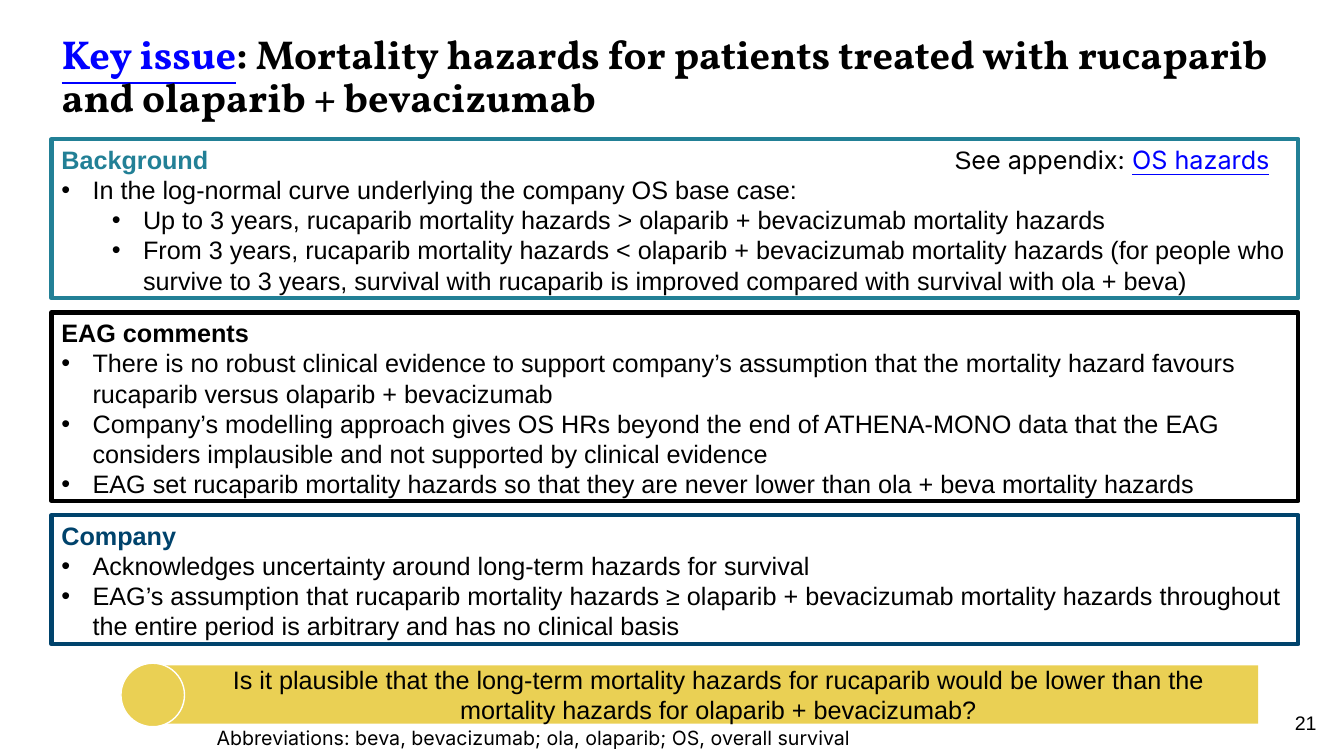
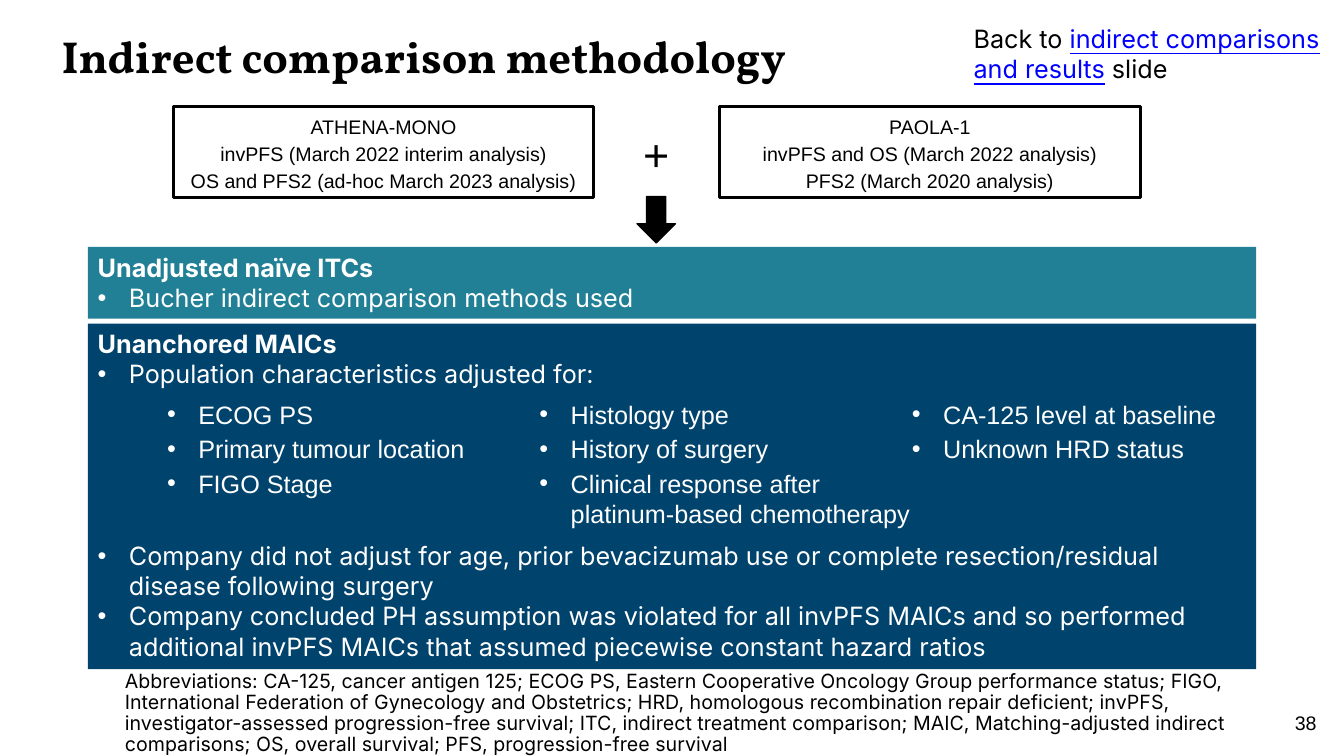
from lxml import etree
from pptx import Presentation
from pptx import util as u
from pptx.dml.color import RGBColor
from pptx.enum import shapes, text
from pptx.oxml.ns import qn

# Shared look
TEAL = RGBColor(0x22, 0x80, 0x96)
NAVY = RGBColor(0x00, 0x43, 0x6C)
YELLOW = RGBColor(0xEA, 0xD0, 0x54)
BLACK = RGBColor(0, 0, 0)
WHITE = RGBColor(0xFF, 0xFF, 0xFF)
LINK_BLUE = RGBColor(0, 0, 0xFF)
BODY_FONT, NOTE_FONT, TITLE_FONT = "Arial", "Inter", "Vollkorn"
LINK = {"color": LINK_BLUE, "underline": True}
CENTER, RIGHT = text.PP_ALIGN.CENTER, text.PP_ALIGN.RIGHT
RECTANGLE = shapes.MSO_SHAPE.RECTANGLE

# The grid: 100 columns by 100 rows over the slide
SLIDE_WIDTH, SLIDE_HEIGHT = u.Inches(13.33), u.Inches(7.5)
BULLET_INDENT = u.Inches(0.31)
LEVEL_STEP = u.Inches(0.5)


def place(left, top, width, height):
    """Turn grid columns and rows into slide lengths."""
    return (int(SLIDE_WIDTH * left / 100), int(SLIDE_HEIGHT * top / 100),
            int(SLIDE_WIDTH * width / 100), int(SLIDE_HEIGHT * height / 100))


def add_bullet(paragraph, level):
    paragraph.level = level
    properties = paragraph._p.get_or_add_pPr()
    properties.set("marL", str(BULLET_INDENT + level * LEVEL_STEP))
    properties.set("indent", str(-BULLET_INDENT))
    etree.SubElement(properties, qn("a:buFont")).set("typeface", "Arial")
    etree.SubElement(properties, qn("a:buChar")).set("char", "•")


def add_text(shape, content, size=18, font=BODY_FONT, color=BLACK, bold=False,
             underline=False, align=text.PP_ALIGN.LEFT, spacing=None,
             before=None, bullet=None):
    """Append one paragraph; content is a string or (string, format) runs."""
    frame = shape.text_frame
    paragraph = frame.paragraphs[0]
    if paragraph.runs:
        paragraph = frame.add_paragraph()
    if bullet is not None:
        add_bullet(paragraph, bullet)
    paragraph.alignment = align
    if spacing:
        paragraph.line_spacing = spacing
    if before:
        paragraph.space_before = u.Pt(before)
    base = {"size": size, "font": font, "color": color, "bold": bold,
            "underline": underline}
    runs = [(content, {})] if isinstance(content, str) else content
    for words, changes in runs:
        look = {**base, **changes}
        run = paragraph.add_run()
        run.text = words
        run.font.size = u.Pt(look["size"])
        run.font.name = look["font"]
        run.font.color.rgb = look["color"]
        run.font.bold = look["bold"]
        run.font.underline = look["underline"]


def add_box(slide, area, fill=None, line=None, line_width=1, kind=RECTANGLE):
    shape = slide.shapes.add_shape(kind, *place(*area))
    shape.shadow.inherit = False
    if fill is None:
        shape.fill.background()
    else:
        shape.fill.solid()
        shape.fill.fore_color.rgb = fill
    if line is None:
        shape.line.fill.background()
    else:
        shape.line.color.rgb = line
        shape.line.width = u.Pt(line_width)
    shape.text_frame.word_wrap = True
    shape.text_frame.vertical_anchor = text.MSO_ANCHOR.TOP
    return shape


def add_label(slide, area, content, **look):
    label = slide.shapes.add_textbox(*place(*area))
    label.text_frame.word_wrap = True
    add_text(label, content, **look)
    return label


def add_abbreviations(slide, area, content):
    add_label(slide, area, "Abbreviations: " + content, size=14,
              font=NOTE_FONT, spacing=0.9)


def add_panel(slide, area, heading, bullets, heading_color, **look):
    """A box with a bold heading; bullets are (string, format) pairs."""
    panel = add_box(slide, area, **look)
    add_text(panel, heading, color=heading_color, bold=True)
    for words, changes in bullets:
        add_text(panel, words, **{"bullet": 0, **changes})


def add_band(slide, area, fill, heading, bullets):
    band = add_box(slide, area, fill=fill)
    look = {"font": NOTE_FONT, "color": WHITE}
    add_text(band, heading, bold=True, **look)
    for words, before in bullets:
        add_text(band, words, bullet=0, before=before, **look)


def add_slide(presentation, title, size, number):
    slide = presentation.slides.add_slide(presentation.slide_layouts[5])
    heading = slide.shapes.title
    heading.left, heading.top, heading.width, heading.height = place(
        3.83, 3.87, 92.25, 8.67)
    heading.text_frame.word_wrap = True
    heading.text_frame.auto_size = text.MSO_AUTO_SIZE.NONE
    heading.text_frame.vertical_anchor = text.MSO_ANCHOR.TOP
    add_text(heading, title, size=size, font=TITLE_FONT, bold=True, spacing=0.9)
    add_label(slide, (94.88, 93.33, 3.82, 5.33), str(number), size=14,
              align=RIGHT)
    return slide


def build_hazards(presentation):
    slide = add_slide(presentation, [
        ("Key issue", LINK),
        (": Mortality hazards for patients treated with rucaparib and "
         "olaparib + bevacizumab", {})], 28.8, 21)

    # Stacked outlined panels
    panels = [
        ("Background", TEAL, 21.07, [
            ("In the log-normal curve underlying the company OS base case:", {}),
            ("Up to 3 years, rucaparib mortality hazards > olaparib + "
             "bevacizumab mortality hazards", {"bullet": 1}),
            ("From 3 years, rucaparib mortality hazards < olaparib + "
             "bevacizumab mortality hazards (for people who survive to 3 years, "
             "survival with rucaparib is improved compared with survival with "
             "ola + beva)", {"bullet": 1})]),
        ("EAG comments", BLACK, 24.93, [
            ("There is no robust clinical evidence to support company’s "
             "assumption that the mortality hazard favours rucaparib versus "
             "olaparib + bevacizumab", {}),
            ("Company’s modelling approach gives OS HRs beyond the end of "
             "ATHENA-MONO data that the EAG considers implausible and not "
             "supported by clinical evidence", {}),
            ("EAG set rucaparib mortality hazards so that they are never lower "
             "than ola + beva mortality hazards", {})]),
        ("Company", NAVY, 17.07, [
            ("Acknowledges uncertainty around long-term hazards for survival",
             {}),
            ("EAG’s assumption that rucaparib mortality hazards ≥ olaparib + "
             "bevacizumab mortality hazards throughout the entire period is "
             "arbitrary and has no clinical basis", {})]),
    ]
    first_top, gap = 18.4, 1.87
    top = first_top
    for heading, color, height, bullets in panels:
        add_panel(slide, (3.83, top, 92.78, height), heading, bullets, color,
                  line=color, line_width=3)
        top += height + gap

    # Question for the committee
    question = add_box(slide, (11.93, 88, 81.68, 7.73), fill=YELLOW)
    question.text_frame.margin_left = u.Inches(0.28)
    question.text_frame.vertical_anchor = text.MSO_ANCHOR.MIDDLE
    add_text(question, "Is it plausible that the long-term mortality hazards for "
             "rucaparib would be lower than the mortality hazards for olaparib "
             "+ bevacizumab?", align=CENTER)
    add_box(slide, (9, 87.73, 4.73, 8.4), fill=YELLOW, line=WHITE,
            kind=shapes.MSO_SHAPE.OVAL)

    # Cross-reference and abbreviations
    add_label(slide, (70.28, first_top, 26.33, 5.33), [
        ("S", {"font": BODY_FONT}), ("ee appendix: ", {}),
        ("OS hazards", LINK)], font=NOTE_FONT)
    add_abbreviations(slide, (15.38, 95.73, 74.55, 5.33),
                      "beva, bevacizumab; ola, olaparib; OS, overall survival")


def build_methodology(presentation):
    slide = add_slide(presentation, "Indirect comparison methodology", 32, 38)

    # Trials being compared
    trials = [
        (12.9, ["ATHENA-MONO", "invPFS (March 2022 interim analysis)",
                "OS and PFS2 (ad-hoc March 2023 analysis)"]),
        (53.55, ["PAOLA-1", "invPFS and OS (March 2022 analysis)",
                 "PFS2 (March 2020 analysis)"]),
    ]
    for left, lines in trials:
        trial = add_box(slide, (left, 14.13, 31.28, 12), fill=WHITE, line=BLACK,
                        line_width=2.25)
        for line in lines:
            add_text(trial, line, size=14, align=CENTER, spacing=1.14)
    add_label(slide, (46.88, 15.07, 3.9, 4.67), "+", size=32, align=CENTER,
              spacing=1.14)
    add_box(slide, (47.4, 26, 2.85, 6.13), fill=BLACK, line=BLACK,
            kind=shapes.MSO_SHAPE.DOWN_ARROW)

    # Method bands; the second leaves room for the characteristics
    add_band(slide, (6.53, 32.67, 86.93, 9.47), TEAL, "Unadjusted naïve ITCs",
             [("Bucher indirect comparison methods used", None)])
    add_band(slide, (6.53, 42.8, 86.93, 45.73), NAVY, "Unanchored MAICs", [
        ("Population characteristics adjusted for:", None),
        ("Company did not adjust for age, prior bevacizumab use or complete "
         "resection/residual disease following surgery", 108),
        ("Company concluded PH assumption was violated for all invPFS MAICs and "
         "so performed additional invPFS MAICs that assumed piecewise constant "
         "hazard ratios", None)])

    # Characteristics in three text columns
    first, *others = [
        "ECOG PS", "Primary tumour location", "FIGO Stage", "Histology type",
        "History of surgery",
        "Clinical response after platinum-based chemotherapy",
        "CA-125 level at baseline", "Unknown HRD status"]
    characteristics = add_label(slide, (11.7, 52.13, 84.6, 18.93), first,
                                color=WHITE, bullet=0)
    characteristics.text_frame._txBody.bodyPr.set("numCol", "3")
    for name in others:
        add_text(characteristics, name, color=WHITE, bullet=0, before=3)

    # Abbreviations and way back
    add_abbreviations(
        slide, (8.55, 88.13, 86.93, 5.2),
        "CA-125, cancer antigen 125; ECOG PS, Eastern Cooperative Oncology Group "
        "performance status; FIGO, International Federation of Gynecology and "
        "Obstetrics; HRD, homologous recombination repair deficient; invPFS, "
        "investigator-assessed progression-free survival; ITC, indirect "
        "treatment comparison; MAIC, Matching-adjusted indirect comparisons; "
        "OS, overall survival; PFS, progression-free survival")
    add_label(slide, (71.7, 2.4, 27.83, 9.47), [
        ("Back to ", {}), ("indirect comparisons and results", LINK),
        (" slide", {})], font=NOTE_FONT)


def main():
    presentation = Presentation()
    presentation.slide_width = SLIDE_WIDTH
    presentation.slide_height = SLIDE_HEIGHT
    build_hazards(presentation)
    build_methodology(presentation)
    presentation.save("out.pptx")


if __name__ == "__main__":
    main()
